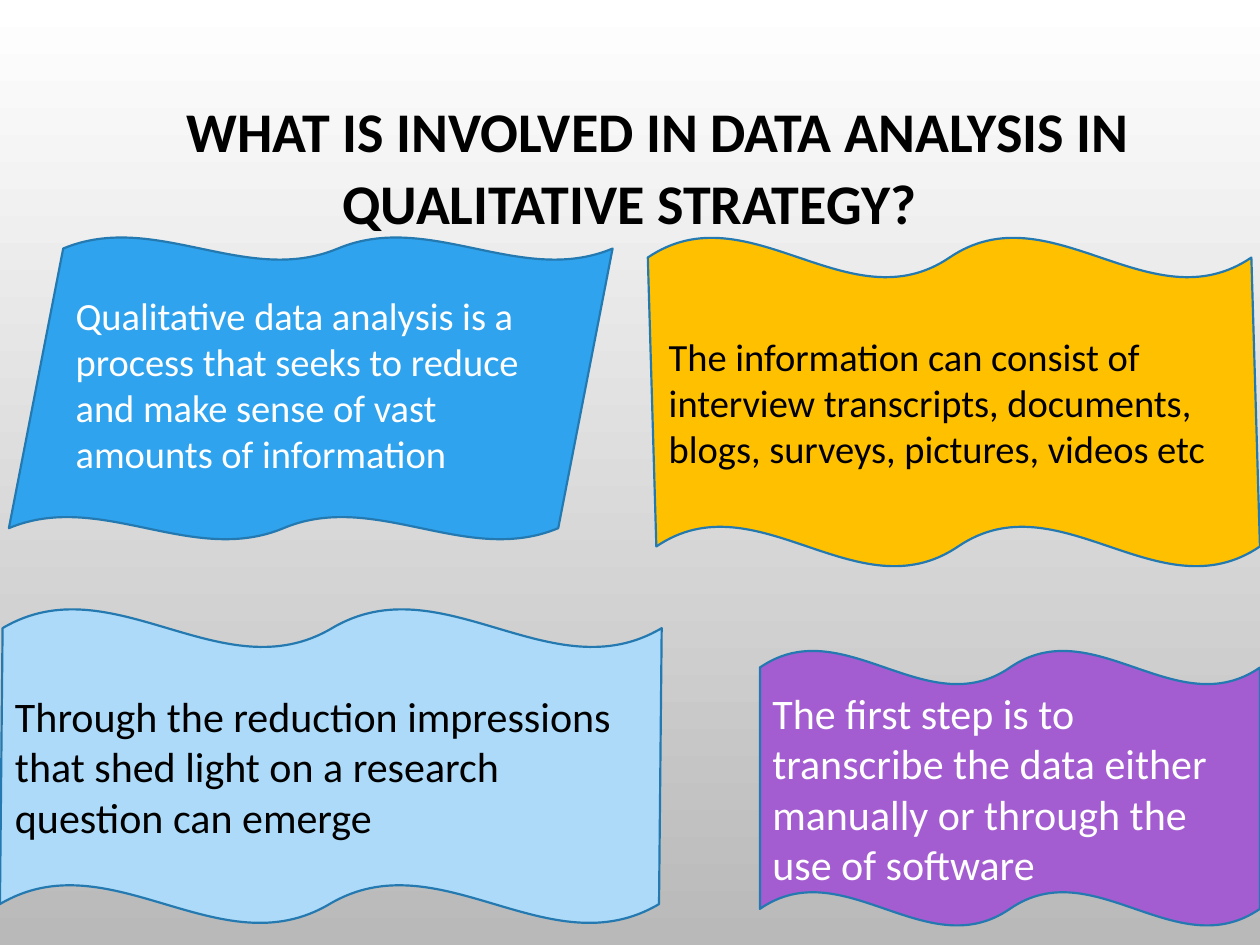
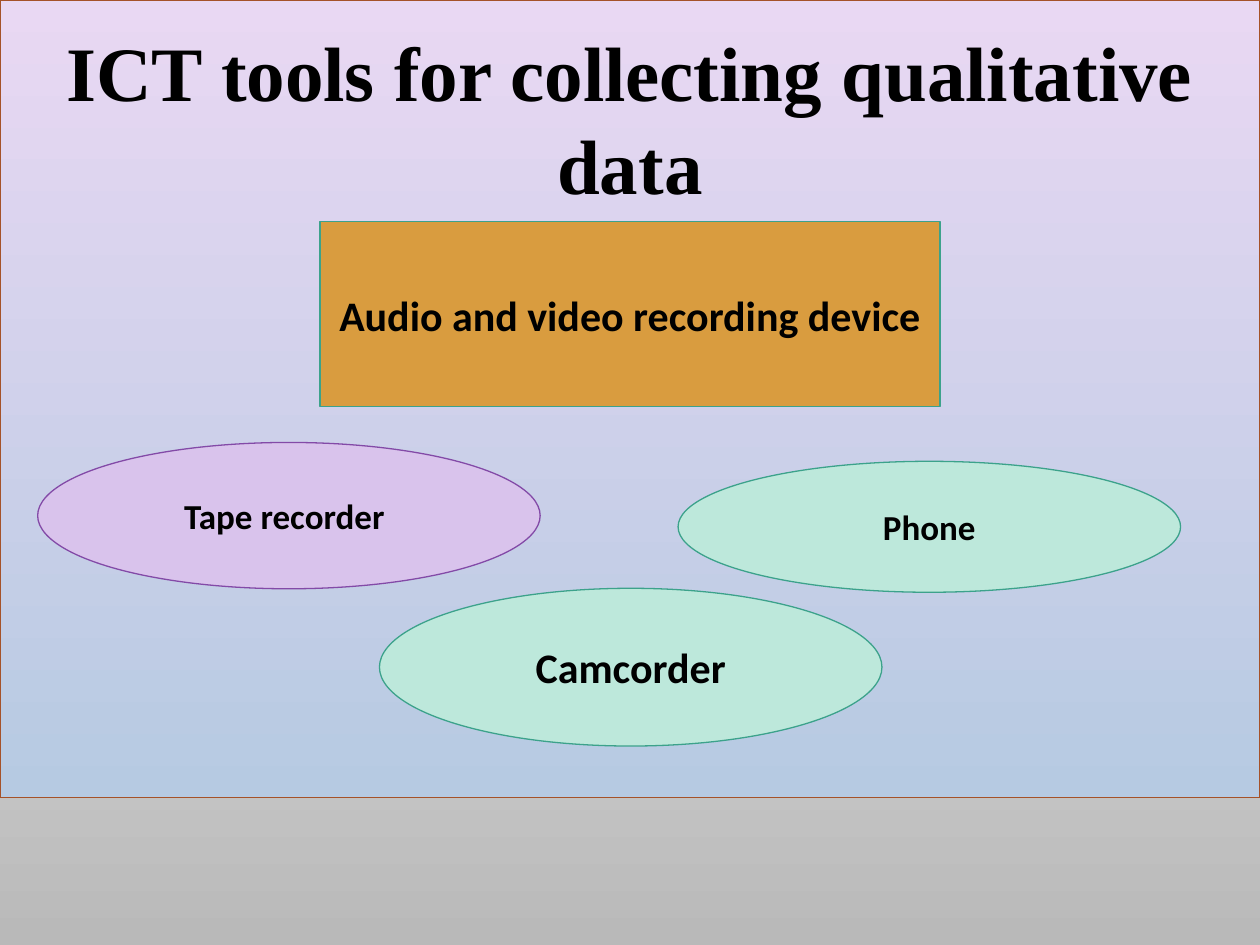
"""Build two slides on qualitative data analysis and its ICT tools."""
from pptx import Presentation
from pptx.dml.color import RGBColor
from pptx.enum.shapes import MSO_SHAPE as Shape
from pptx.enum.text import MSO_ANCHOR as Anchor, PP_ALIGN as Align
from pptx.util import Cm, Pt

COLOURS = {
    "black": "000000", "white": "FFFFFF", "grey": "B9B9B9",
    "blue": "2FA3EE", "dark blue": "2379B0", "pale blue": "ACDAF8",
    "yellow": "FFC000", "purple": "A35DD1", "dark purple": "834AA7",
    "lilac": "D9C3EC", "pale lilac": "E9D8F3", "steel": "B6CAE2",
    "brown": "A55229", "ochre": "D99C3F", "mint": "BDE8DB", "green": "3CA28B",
}
BACKGROUND = ("white", "grey")
OVAL_WIDTH = 10.13

ANALYSIS_TITLE = {
    "text": "WHAT IS INVOLVED IN DATA ANALYSIS IN QUALITATIVE STRATEGY?",
    "at": (-0.1, 2.16, 25.6, 2.29), "size": 32, "bold": True,
    "align": Align.CENTER, "spacing": 1.07, "indent": 1.14,
}
WAVE = {"kind": Shape.DOUBLE_WAVE, "line": "dark blue", "line_width": 1.25}
WAVES = [
    {"text": "Qualitative data analysis is a process that seeks to reduce "
             "and make sense of vast amounts of information",
     "at": (0.18, 4.78, 12.17, 6.1), "adjust": (0.038, -0.045),
     "fill": "blue", "colour": "white", "size": 22,
     "margins": {"margin_bottom": 0.3}},
    {"text": "Through the reduction impressions that shed light on a "
             "research question can emerge",
     "at": (0, 12.27, 13.34, 6.35), "adjust": (0.062, -0.002),
     "fill": "pale blue", "size": 24},
    {"text": "The information can consist of interview transcripts, "
             "documents, blogs, surveys, pictures, videos etc",
     "at": (13.06, 4.78, 12.34, 6.65), "adjust": (0.062, 0.007),
     "fill": "yellow", "size": 22},
    {"text": "The first step is to transcribe the data either manually or "
             "through the use of software",
     "at": (15.32, 13.11, 10.08, 5.56), "fill": "purple",
     "colour": "white", "size": 24},
]

TOOL = {"kind": Shape.OVAL, "line": "green", "line_width": 0.75,
        "fill": "mint", "size": 20, "bold": True, "align": Align.CENTER}
TOOLS = [
    {"text": "ICT tools for collecting qualitative data",
     "kind": Shape.RECTANGLE, "at": (0, 0, 25.4, 16.08),
     "fill": ("pale lilac", "steel"), "line": "brown", "size": 44,
     "font": "Times New Roman", "anchor": Anchor.TOP,
     "margins": {"margin_top": 0.5}},
    {"text": "Audio and video recording device", "kind": Shape.RECTANGLE,
     "at": (6.45, 4.47, 12.5, 3.73), "fill": "ochre", "size": 24},
    {"text": "Tape recorder", "at": (0.76, 8.92, OVAL_WIDTH, 2.95),
     "fill": "lilac", "line": "dark purple",
     "margins": {"margin_right": 0.43}},
    {"text": "Phone", "at": (13.67, 9.3, OVAL_WIDTH, 2.64)},
    {"text": "Camcorder", "at": (7.65, 11.86, OVAL_WIDTH, 3.18), "size": 24},
]


def rgb(name):
    return RGBColor.from_string(COLOURS[name])


def paint(fill, colour):
    if isinstance(colour, str):
        fill.solid()
        fill.fore_color.rgb = rgb(colour)
        return
    fill.gradient()
    fill.gradient_angle = 270
    for stop, name in zip(fill.gradient_stops, colour):
        stop.color.rgb = rgb(name)


def set_all(target, values):
    for name, value in values.items():
        setattr(target, name, value)


def write(shape, part):
    frame = shape.text_frame
    set_all(frame, {"word_wrap": True,
                    "vertical_anchor": part.get("anchor", Anchor.MIDDLE)})
    set_all(frame, {side: Cm(gap)
                    for side, gap in part.get("margins", {}).items()})
    paragraph = frame.paragraphs[0]
    set_all(paragraph, {"alignment": part.get("align", Align.LEFT),
                        "line_spacing": part.get("spacing")})
    if "indent" in part:
        properties = paragraph._p.get_or_add_pPr()
        properties.set("indent", str(Cm(part["indent"])))
    run = paragraph.add_run()
    run.text = part["text"]
    set_all(run.font, {"name": part.get("font", "Calibri"),
                       "size": Pt(part["size"]),
                       "bold": part.get("bold", False)})
    run.font.color.rgb = rgb(part.get("colour", "black"))


def add_part(slide, part):
    shape = slide.shapes.add_shape(part["kind"], *map(Cm, part["at"]))
    shape.shadow.inherit = False
    for index, value in enumerate(part.get("adjust", ())):
        shape.adjustments[index] = value
    paint(shape.fill, part["fill"])
    paint(shape.line.fill, part["line"])
    shape.line.width = Pt(part["line_width"])
    write(shape, part)


def add_slide(presentation, style, parts):
    slide = presentation.slides.add_slide(presentation.slide_layouts[6])
    paint(slide.background.fill, BACKGROUND)
    for part in parts:
        add_part(slide, {**style, **part})
    return slide


def main():
    presentation = Presentation()
    set_all(presentation, {"slide_width": Cm(25.4), "slide_height": Cm(19.05)})
    analysis = add_slide(presentation, WAVE, WAVES)
    title = analysis.shapes.add_textbox(*map(Cm, ANALYSIS_TITLE["at"]))
    write(title, ANALYSIS_TITLE)
    add_slide(presentation, TOOL, TOOLS)
    presentation.save("out.pptx")


if __name__ == "__main__":
    main()
